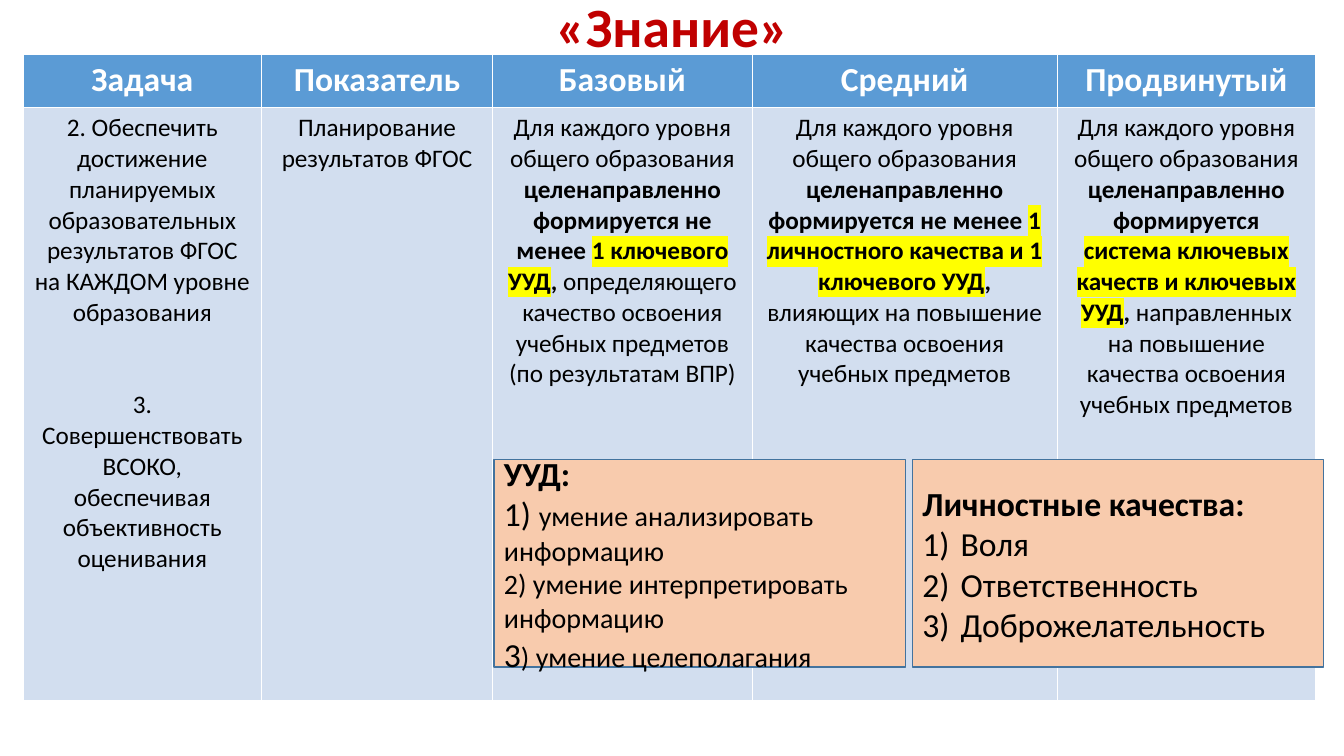
from lxml.etree import SubElement
from pptx import Presentation
from pptx.dml.color import RGBColor
from pptx.enum.shapes import MSO_SHAPE
from pptx.enum.text import MSO_ANCHOR, MSO_AUTO_SIZE, PP_ALIGN
from pptx.oxml.ns import qn
from pptx.util import Inches, Pt

FONT = "Calibri"
COLUMN_WIDTHS = [2.36, 2.29, 2.57, 3.02, 2.56]
ROW_HEIGHTS = [0.53, 5.88]
HEADINGS = ["Задача", "Показатель", "Базовый", "Средний", "Продвинутый"]
TASKS = [
    "2. Обеспечить достижение планируемых образовательных результатов ФГОС "
    "на КАЖДОМ уровне образования",
    "3. Совершенствовать ВСОКО, обеспечивая объективность оценивания",
]
INDICATOR = "Планирование результатов ФГОС"
LEVELS = [
    ("не менее ", "1 ключевого УУД",
     "определяющего качество освоения учебных предметов (по результатам ВПР)"),
    ("не менее ", "1 личностного качества и 1 ключевого УУД",
     "влияющих на повышение качества освоения учебных предметов"),
    ("", "система ключевых качеств и ключевых УУД",
     "направленных на повышение качества освоения учебных предметов"),
]
SKILLS = [
    [("1) ", 24), ("умение анализировать информацию", 20)],
    [("2) умение интерпретировать информацию", 20)],
    [("3", 24), (") умение целеполагания", 20)],
]
QUALITIES = ["Воля", "Ответственность", "Доброжелательность"]


def color(value):
    return RGBColor.from_string(value)


def style(paragraph, size=None, ink="000000", bold=False, align=PP_ALIGN.CENTER):
    paragraph.alignment = align
    font = paragraph.font
    font.name = FONT
    font.bold = bold
    font.color.rgb = color(ink)
    if size:
        font.size = Pt(size)
    return paragraph


def add_run(paragraph, text, bold=None, size=None, highlight=None):
    run = paragraph.add_run()
    run.text = text
    if bold is not None:
        run.font.bold = bold
    if size:
        run.font.size = Pt(size)
    if highlight:
        mark = SubElement(run._r.get_or_add_rPr(), qn("a:highlight"))
        SubElement(mark, qn("a:srgbClr")).set("val", highlight)


def number(paragraph):
    properties = paragraph._p.get_or_add_pPr()
    properties.set("marL", str(Inches(0.38)))
    properties.set("indent", str(-Inches(0.38)))
    numbering = SubElement(properties, qn("a:buAutoNum"))
    numbering.set("type", "arabicParenR")
    defaults = properties.find(qn("a:defRPr"))
    if defaults is not None:
        defaults.addprevious(numbering)


def place_title(slide, left, top, width, height):
    title = slide.shapes.title
    title.left, title.top = Inches(left), Inches(top)
    title.width, title.height = Inches(width), Inches(height)
    frame = title.text_frame
    frame.auto_size = MSO_AUTO_SIZE.NONE
    frame.vertical_anchor = MSO_ANCHOR.MIDDLE
    heading = style(frame.paragraphs[0], 39.6, "C00000", True)
    heading.line_spacing = 0.9
    add_run(heading, "«Знание»")


def fill_level(paragraph, amount, target, purpose):
    add_run(paragraph, "Для каждого уровня общего образования ")
    add_run(paragraph, "целенаправленно формируется " + amount, bold=True)
    add_run(paragraph, target, bold=True, highlight="FFFF00")
    add_run(paragraph, ", ", bold=True)
    add_run(paragraph, purpose)


def place_levels_table(slide, left, top, width, height):
    table = slide.shapes.add_table(
        len(ROW_HEIGHTS), len(COLUMN_WIDTHS),
        Inches(left), Inches(top), Inches(width), Inches(height)).table
    for row, share in zip(table.rows, ROW_HEIGHTS):
        row.height = Inches(height * share / sum(ROW_HEIGHTS))
    for index, share in enumerate(COLUMN_WIDTHS):
        table.columns[index].width = Inches(width * share / sum(COLUMN_WIDTHS))
        header, body = table.cell(0, index), table.cell(1, index)
        for cell, shade in ((header, "5B9BD5"), (body, "D2DEEF")):
            cell.fill.solid()
            cell.fill.fore_color.rgb = color(shade)
        heading = style(header.text_frame.paragraphs[0], 24, "FFFFFF", True)
        add_run(heading, HEADINGS[index])
        content = style(body.text_frame.paragraphs[0], 18)
        if index == 0:
            add_run(content, TASKS[0])
            second_task = style(body.text_frame.add_paragraph(), 18)
            second_task.space_before = Pt(44)
            add_run(second_task, TASKS[1])
        elif index == 1:
            add_run(content, INDICATOR)
        else:
            fill_level(content, *LEVELS[index - 2])


def place_card(slide, heading, left, top, width, height):
    card = slide.shapes.add_shape(
        MSO_SHAPE.RECTANGLE, Inches(left), Inches(top), Inches(width), Inches(height))
    card.shadow.inherit = False
    card.fill.solid()
    card.fill.fore_color.rgb = color("F8CBAD")
    card.line.color.rgb = color("43739E")
    card.line.width = Pt(1)
    frame = card.text_frame
    frame.word_wrap = True
    frame.vertical_anchor = MSO_ANCHOR.MIDDLE
    add_run(style(frame.paragraphs[0], 24, bold=True, align=PP_ALIGN.LEFT), heading)
    return frame


def place_skills(slide, *box):
    frame = place_card(slide, "УУД:", *box)
    for skill in SKILLS:
        line = style(frame.add_paragraph(), align=PP_ALIGN.LEFT)
        for text, size in skill:
            add_run(line, text, size=size)


def place_qualities(slide, *box):
    frame = place_card(slide, "Личностные качества:", *box)
    for quality in QUALITIES:
        line = style(frame.add_paragraph(), 24, align=PP_ALIGN.LEFT)
        number(line)
        add_run(line, quality)


def main():
    deck = Presentation()
    deck.slide_width, deck.slide_height = Inches(13.33), Inches(7.5)
    slide = deck.slides.add_slide(deck.slide_layouts.get_by_name("Title Only"))
    place_title(slide, 0.92, 0.07, 11.5, 0.45)
    place_levels_table(slide, 0.23, 0.54, 12.82, 6.41)
    place_skills(slide, 4.9, 4.56, 4.08, 2.06)
    place_qualities(slide, 9.05, 4.56, 4.08, 2.06)
    deck.save("out.pptx")


if __name__ == "__main__":
    main()
